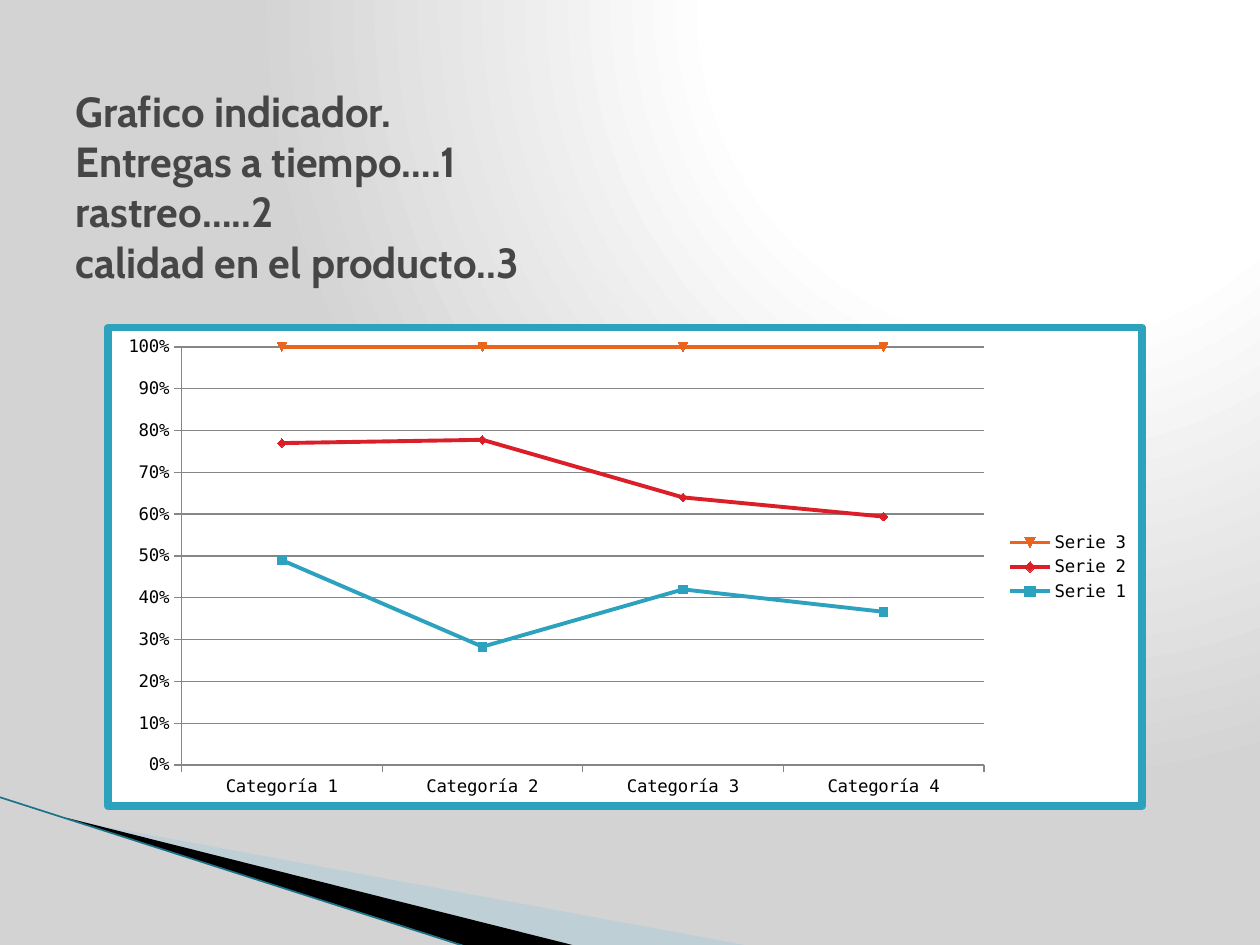
from dataclasses import dataclass

from lxml import etree
from pptx import Presentation
from pptx.chart.data import CategoryChartData
from pptx.dml.color import RGBColor
from pptx.enum.chart import XL_CHART_TYPE, XL_LEGEND_POSITION, XL_TICK_MARK
from pptx.enum.text import MSO_ANCHOR, MSO_AUTO_SIZE, PP_ALIGN
from pptx.oxml import parse_xml
from pptx.oxml.ns import nsdecls, qn
from pptx.util import Pt

LINES = XL_CHART_TYPE.LINE_MARKERS_STACKED_100
RIGHT = XL_LEGEND_POSITION.RIGHT
OUT = XL_TICK_MARK.OUTSIDE
MIDDLE = MSO_ANCHOR.MIDDLE
FIXED = MSO_AUTO_SIZE.NONE
LEFT = PP_ALIGN.LEFT

PX = 914400 / 126


@dataclass(frozen=True)
class Theme:
    white: str = "FFFFFF"
    gray: str = "D3D3D3"
    ink: str = "464646"
    black: str = "000000"
    pale: str = "A0CBDC"
    edge: str = "1C7289"
    grid: str = "868686"
    teal: str = "2DA2BF"
    red: str = "DA1F28"
    orange: str = "EB641B"
    head: str = "Cabin"
    mono: str = "DejaVu Sans Mono"
    head_size: int = 24
    mono_size: int = 10


def emu(*vals):
    return [round(v * PX) for v in vals]


def rgb(color):
    return RGBColor.from_string(color)


def put(obj, fmt):
    for key, val in fmt.items():
        setattr(obj, key, val)


def stroke(line, color, width):
    line.color.rgb = rgb(color)
    line.width = Pt(width)


class Board:
    def __init__(self, slide, theme):
        self.slide = slide
        self.theme = theme

    def back(self):
        t = self.theme
        stops = "".join(
            f'<a:gs pos="{pos}000"><a:srgbClr val="{color}"/></a:gs>'
            for pos, color in ((0, t.white), (40, t.white), (100, t.gray)))
        self.slide.element.cSld.insert(0, parse_xml(
            f'<p:bg {nsdecls("p", "a")}><p:bgPr><a:gradFill rotWithShape="1">'
            f'<a:gsLst>{stops}</a:gsLst><a:path path="circle">'
            '<a:fillToRect l="65000" t="0" r="0" b="98000"/></a:path>'
            '</a:gradFill><a:effectLst/></p:bgPr></p:bg>'))

    def shard(self, points, color, alpha=100):
        pen = self.slide.shapes.build_freeform(*points[0], scale=PX)
        pen.add_line_segments(points[1:], close=True)
        shape = pen.convert_to_shape()
        shape.shadow.inherit = False
        shape.fill.solid()
        shape.fill.fore_color.rgb = rgb(color)
        shape.line.fill.background()
        if alpha < 100:
            tint = shape.element.spPr.find(".//" + qn("a:srgbClr"))
            etree.SubElement(tint, qn("a:alpha"), val=f"{alpha}000")

    def rule(self, ends, color, width):
        link = self.slide.shapes.add_connector(1, *emu(*ends))
        stroke(link.line, color, width)
        etree.SubElement(link.element.spPr, qn("a:effectLst"))

    def title(self, box, text):
        t = self.theme
        shape = self.slide.shapes.title
        put(shape, dict(zip(("left", "top", "width", "height"), emu(*box))))
        frame = shape.text_frame
        put(frame, {"word_wrap": True, "auto_size": FIXED,
                    "vertical_anchor": MIDDLE, "text": text})
        para = frame.paragraphs[0]
        para.alignment = LEFT
        for run in para.runs:
            put(run.font, {"name": t.head, "size": Pt(t.head_size), "bold": True})
            run.font.color.rgb = rgb(t.ink)
        # Bring the title in front of the decoration
        self.slide.shapes.element.append(shape.element)

    def chart(self, box, cats, rows):
        t = self.theme
        data = CategoryChartData()
        data.categories = cats
        for name, vals, _ in rows:
            data.add_series(name, vals)
        chart = self.slide.shapes.add_chart(LINES, *emu(*box), data).chart
        put(chart, {"has_title": False, "has_legend": True})
        put(chart.font, {"name": t.mono, "size": Pt(t.mono_size)})
        chart.font.color.rgb = rgb(t.black)
        put(chart.legend, {"position": RIGHT, "include_in_layout": False})

        # Axes
        val = chart.value_axis
        put(val, {"minimum_scale": 0, "maximum_scale": 1, "major_unit": 0.1,
                  "has_major_gridlines": True})
        put(val.tick_labels, {"number_format": "0%",
                              "number_format_is_linked": False})
        stroke(val.major_gridlines.format.line, t.grid, 0.75)
        for axis in (val, chart.category_axis):
            axis.major_tick_mark = OUT
            stroke(axis.format.line, t.grid, 0.75)

        # Series
        plot = chart.plots[0]
        plot.vary_by_categories = False
        for item, (_, _, color) in zip(plot.series, rows):
            item.smooth = False
            stroke(item.format.line, color, 2.25)
            item.marker.size = 5
            look = item.marker.format
            look.fill.solid()
            look.fill.fore_color.rgb = rgb(color)
            stroke(look.line, color, 0.75)

        # Panel and border
        chart.element.find(qn("c:chart")).addnext(parse_xml(
            f'<c:spPr {nsdecls("c", "a")}><a:solidFill>'
            f'<a:srgbClr val="{t.white}"/></a:solidFill>'
            f'<a:ln w="{Pt(4.33)}"><a:solidFill><a:srgbClr val="{t.teal}"/>'
            '</a:solidFill><a:round/></a:ln></c:spPr>'))


def main():
    deck = Presentation()
    deck.slide_width, deck.slide_height = emu(1260, 945)
    theme = Theme()
    board = Board(deck.slides.add_slide(deck.slide_layouts[5]), theme)

    # Background and corner decoration
    board.back()
    board.shard([(69, 820), (750, 946), (575, 946), (69, 819)], theme.pale, 40)
    board.shard([(67, 818), (576, 946), (469, 947), (68, 819)], theme.black)
    board.rule((-1, 797, 467, 947), theme.edge, 0.95)

    # Title
    board.title((63, 38, 1134, 296),
                "Grafico indicador.\vEntregas a tiempo….1\v"
                "rastreo…..2\vcalidad en el producto..3")

    # Indicator chart
    board.chart((104, 324, 1042, 486),
                [f"Categoría {n}" for n in range(1, 5)],
                [("Serie 1", (49, 28, 42, 37), theme.teal),
                 ("Serie 2", (28, 49, 22, 23), theme.red),
                 ("Serie 3", (23, 22, 36, 41), theme.orange)])

    deck.save("out.pptx")


if __name__ == "__main__":
    main()
